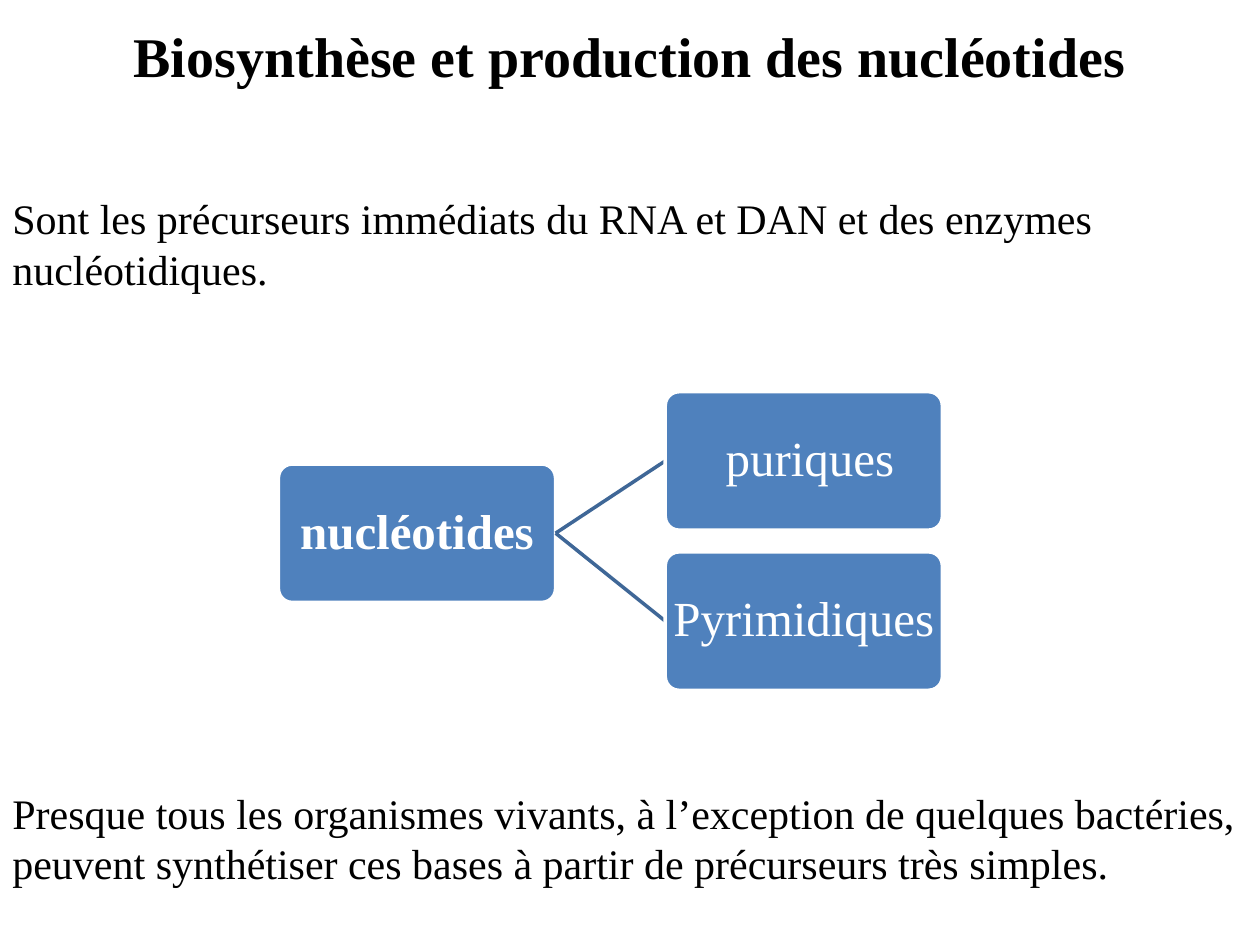
"""Build the slide on nucleotide biosynthesis with its two-branch tree."""
from dataclasses import dataclass

from pptx import Presentation
from pptx import util as u
from pptx.dml.color import RGBColor
from pptx.enum import shapes, text
from pptx.oxml.ns import qn
from lxml import etree

SLIDE_WIDTH = u.Inches(10)
SLIDE_HEIGHT = u.Inches(7.5)


@dataclass(frozen=True)
class Theme:
    font: str = "Times New Roman"
    ink: RGBColor = RGBColor(0x00, 0x00, 0x00)
    paper: RGBColor = RGBColor(0xFF, 0xFF, 0xFF)
    node: RGBColor = RGBColor(0x4F, 0x81, 0xBD)
    branch: RGBColor = RGBColor(0x3F, 0x67, 0x97)
    title_size: u.Pt = u.Pt(32)
    body_size: u.Pt = u.Pt(24)
    node_size: u.Pt = u.Pt(28)
    line_width: u.Pt = u.Pt(2)


@dataclass(frozen=True)
class Frame:
    """Lengths in hundredths of the slide's width and height."""
    left: float
    top: float
    width: float
    height: float

    def lengths(self) -> tuple[int, int, int, int]:
        return (int(SLIDE_WIDTH * self.left / 100), int(SLIDE_HEIGHT * self.top / 100),
                int(SLIDE_WIDTH * self.width / 100), int(SLIDE_HEIGHT * self.height / 100))


@dataclass(frozen=True)
class Node:
    label: str
    left: float
    top: float
    bold: bool = False


@dataclass(frozen=True)
class Passage:
    wording: str
    top: float


THEME = Theme()
NODE_WIDTH, NODE_HEIGHT = 22, 14.65
TITLE = "Biosynthèse et production des nucléotides"
TITLE_FRAME = Frame(0, 1.6, 100, 8.53)
PASSAGES = (
    Passage("Sont les précurseurs immédiats du RNA et DAN et des enzymes nucléotidiques.", 19.73),
    Passage("Presque tous les organismes vivants, à l’exception de quelques bactéries, "
            "peuvent synthétiser ces bases à partir de précurseurs très simples.", 82.67),
)
ROOT = Node("nucléotides", 22.1, 49.1, bold=True)
CHILDREN = (Node(" puriques", 52.8, 41.45), Node("Pyrimidiques", 52.8, 58.4))


def write(shape, wording: str, size: u.Pt, colour: RGBColor, bold: bool = False,
          alignment=text.PP_ALIGN.LEFT):
    frame = shape.text_frame
    frame.word_wrap = True
    frame.text = wording
    paragraph = frame.paragraphs[0]
    paragraph.alignment = alignment
    paragraph.font.name = THEME.font
    paragraph.font.size = size
    paragraph.font.bold = bold
    paragraph.font.color.rgb = colour
    return paragraph


def add_title(slide) -> None:
    title = slide.shapes.title
    title.left, title.top, title.width, title.height = TITLE_FRAME.lengths()
    write(title, TITLE, THEME.title_size, THEME.ink, True, text.PP_ALIGN.CENTER)
    title.text_frame.auto_size = text.MSO_AUTO_SIZE.NONE


def add_passage(slide, passage: Passage) -> None:
    box = slide.shapes.add_textbox(*Frame(0, passage.top, 100, 12.13).lengths())
    write(box, passage.wording, THEME.body_size, THEME.ink)


def add_node(slide, node: Node):
    frame = Frame(node.left, node.top, NODE_WIDTH, NODE_HEIGHT)
    shape = slide.shapes.add_shape(shapes.MSO_SHAPE.ROUNDED_RECTANGLE, *frame.lengths())
    shape.adjustments[0] = 0.1
    shape.shadow.inherit = False
    shape.fill.solid()
    shape.fill.fore_color.rgb = THEME.node
    shape.line.color.rgb = THEME.paper
    shape.line.width = THEME.line_width
    paragraph = write(shape, node.label, THEME.node_size, THEME.paper,
                      node.bold, text.PP_ALIGN.CENTER)
    paragraph.line_spacing = 0.9
    body = shape.text_frame
    body.vertical_anchor = text.MSO_ANCHOR.MIDDLE
    body.margin_left = body.margin_right = u.Inches(0.02)
    body.margin_top = body.margin_bottom = u.Inches(0.02)
    return shape


def add_branch(slide, parent, child) -> None:
    connector = slide.shapes.add_connector(shapes.MSO_CONNECTOR.STRAIGHT, 0, 0, 0, 0)
    connector.begin_connect(parent, 3)
    connector.end_connect(child, 1)
    connector.line.color.rgb = THEME.branch
    connector.line.width = THEME.line_width
    etree.SubElement(connector._element.spPr, qn("a:effectLst"))
    child._element.addprevious(connector._element)


def main() -> None:
    presentation = Presentation()
    presentation.slide_width = SLIDE_WIDTH
    presentation.slide_height = SLIDE_HEIGHT
    slide = presentation.slides.add_slide(presentation.slide_layouts.get_by_name("Title Only"))
    add_title(slide)
    for passage in PASSAGES:
        add_passage(slide, passage)
    root = add_node(slide, ROOT)
    for child in CHILDREN:
        add_branch(slide, root, add_node(slide, child))
    presentation.save("out.pptx")


if __name__ == "__main__":
    main()
